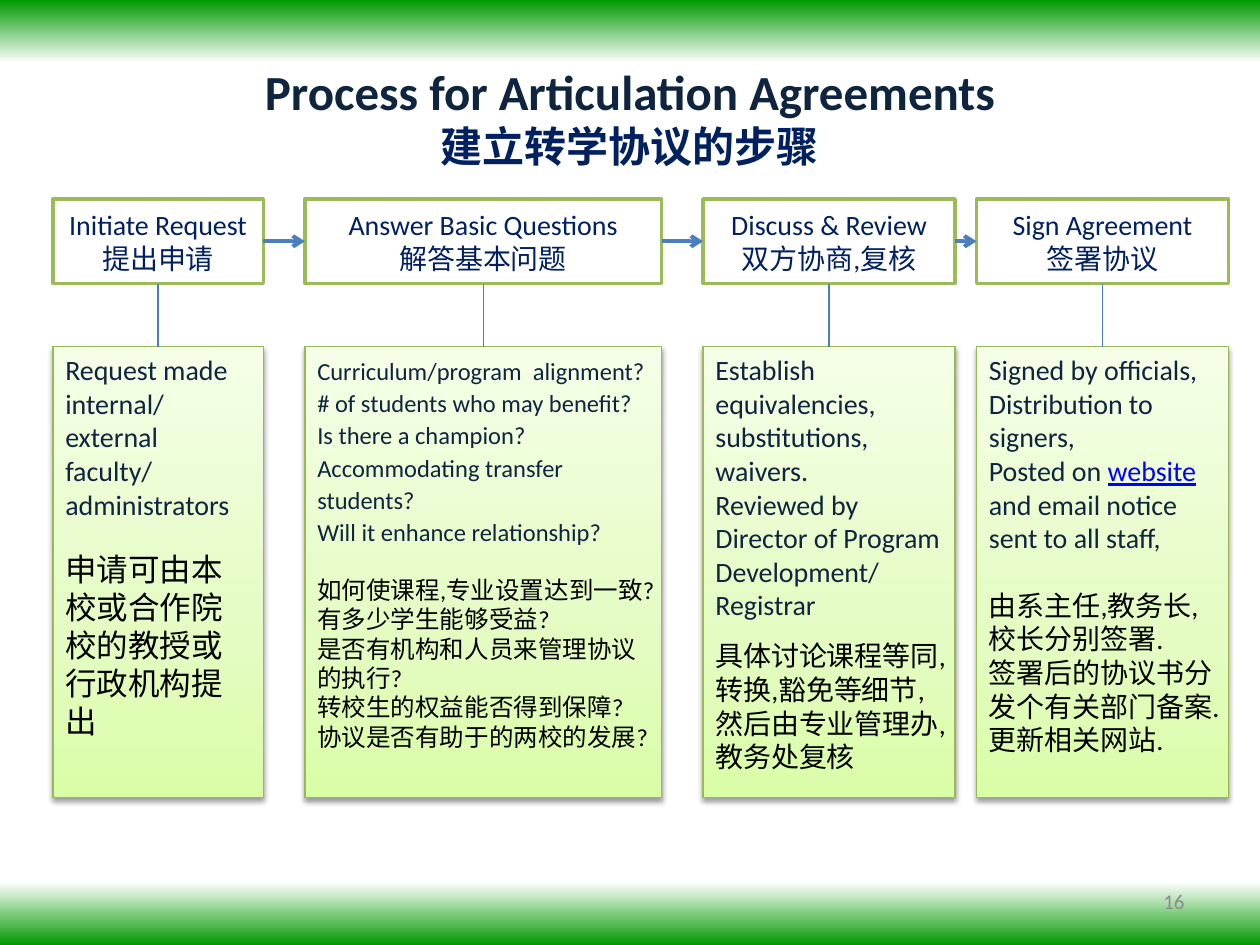
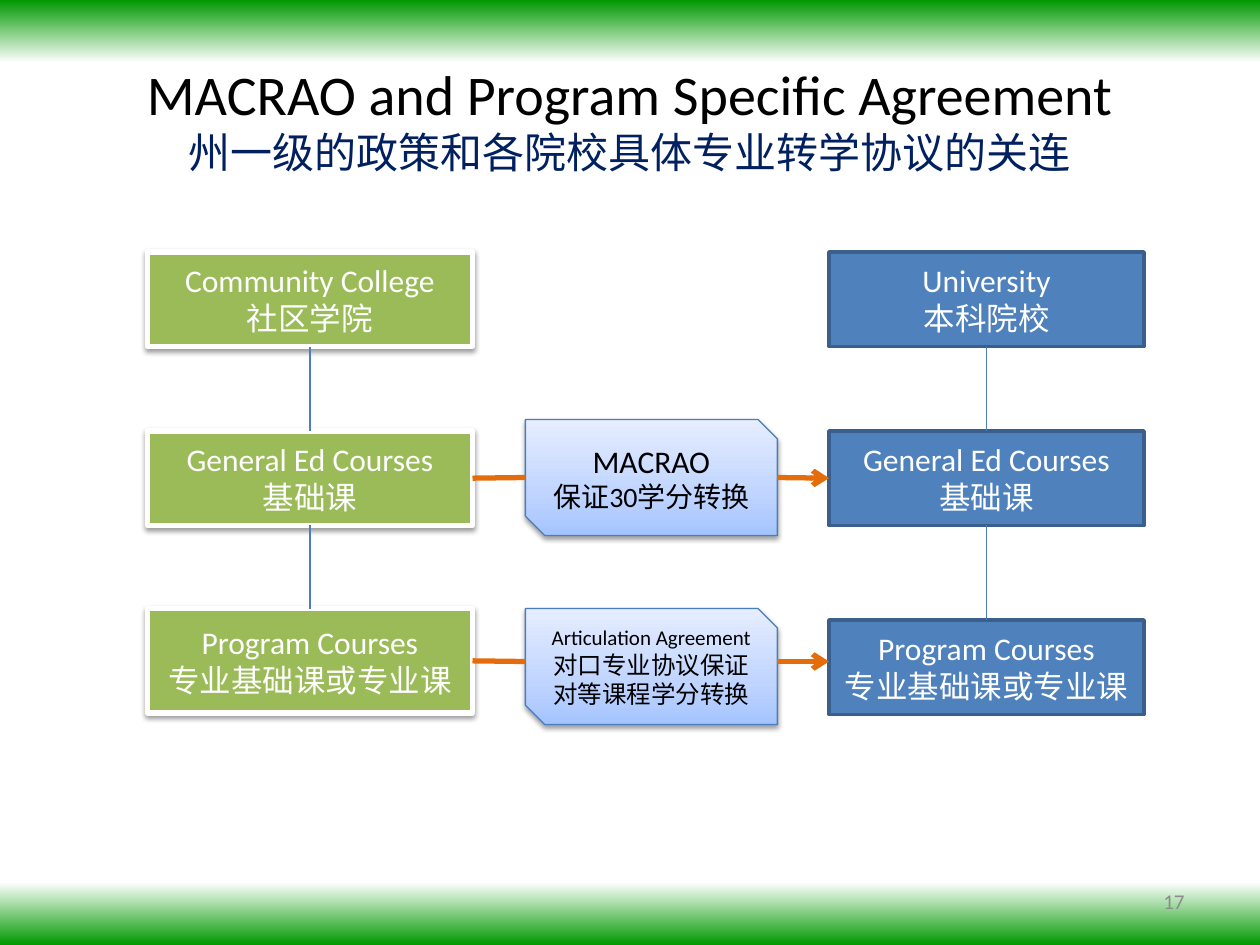
from dataclasses import dataclass

from lxml.etree import SubElement
from pptx import Presentation
from pptx.dml.color import RGBColor
from pptx.enum.shapes import MSO_CONNECTOR, MSO_SHAPE
from pptx.enum.text import MSO_ANCHOR, PP_ALIGN
from pptx.oxml.ns import qn
from pptx.shapes.autoshape import Shape
from pptx.util import Inches, Pt

FONT = "Calibri"
COLORS = {
    "band": "009900", "white": "FFFFFF", "black": "000000",
    "ink": "0F243E", "navy": "002060", "gray": "8C8C8C", "link": "0000FF",
    "green": "9BBB59", "edge": "98B955", "blue": "4F81BD",
    "rim": "3A5F8C", "wire": "4B7EBC", "orange": "E46C0A",
    "lime1": "DAFDA7", "lime2": "E4FCC2", "lime3": "F5FFE7",
    "sky1": "A4C4FF", "sky2": "BFD4FF", "sky3": "E6EEFF",
}
LIME = [(0, "lime1"), (35, "lime2"), (100, "lime3")]
SKY = [(0, "sky1"), (35, "sky2"), (100, "sky3")]
FADE = [(0, "band"), (100, "white")]
TOP, LEFT, BOTTOM, RIGHT = range(4)


@dataclass
class Line:
    text: str  # a part between bars is shown as a link
    size: float
    color: str
    bold: bool = False
    before: float = 0
    spacing: float = 1.0


def rgb(name):
    return RGBColor.from_string(COLORS[name])


def write(frame, lines, align=PP_ALIGN.CENTER, anchor=MSO_ANCHOR.MIDDLE):
    frame.word_wrap = True
    frame.vertical_anchor = anchor
    for i, line in enumerate(lines):
        para = frame.add_paragraph() if i else frame.paragraphs[0]
        para.alignment = align
        para.line_spacing = line.spacing
        if line.before:
            para.space_before = Pt(line.before)
        for j, part in enumerate(line.text.split("|")):
            run = para.add_run()
            run.text = part
            font = run.font
            font.name, font.size, font.bold = FONT, Pt(line.size), line.bold
            font.color.rgb = rgb("link" if j % 2 else line.color)
            font.underline = bool(j % 2)


def shade(shape, stops, angle=90):
    """Gradient fill; 90 runs upward and 270 downward."""
    shape.fill.gradient()
    shape.fill.gradient_angle = angle
    group = shape._element.spPr.find(qn("a:gradFill")).find(qn("a:gsLst"))
    for stop in list(group):
        group.remove(stop)
    for pos, name in stops:
        stop = SubElement(group, qn("a:gs"), pos=str(pos * 1000))
        SubElement(stop, qn("a:srgbClr"), val=COLORS[name])


def drop(shape):
    """Soft shadow below the shape."""
    effects = shape._element.spPr.find(qn("a:effectLst"))
    outer = SubElement(effects, qn("a:outerShdw"), blurRad=str(Pt(3.1)),
                       dist=str(Pt(1.6)), dir="5400000", rotWithShape="0")
    tint = SubElement(outer, qn("a:srgbClr"), val=COLORS["black"])
    SubElement(tint, qn("a:alpha"), val="38000")


def box(slide, at, fill, line=None, width=1.0, kind=MSO_SHAPE.RECTANGLE,
        shadow=False, angle=90):
    shape = slide.shapes.add_shape(kind, *map(Inches, at))
    shape.shadow.inherit = False
    if isinstance(fill, list):
        shade(shape, fill, angle)
    else:
        shape.fill.solid()
        shape.fill.fore_color.rgb = rgb(fill)
    if line:
        shape.line.color.rgb = rgb(line)
        shape.line.width = Pt(width)
    else:
        shape.line.fill.background()
    if shadow:
        drop(shape)
    return shape


def spot(end):
    """Point for an (x, y) pair or a (box, side) pair."""
    if not isinstance(end[0], Shape):
        return Inches(end[0]), Inches(end[1])
    item, side = end
    x = {LEFT: 0, RIGHT: item.width}.get(side, item.width // 2)
    y = {TOP: 0, BOTTOM: item.height}.get(side, item.height // 2)
    return item.left + x, item.top + y


def wire(slide, start, stop, color="wire", width=0.75, arrow=False):
    line = slide.shapes.add_connector(
        MSO_CONNECTOR.STRAIGHT, *spot(start), *spot(stop))
    if isinstance(start[0], Shape):
        line.begin_connect(*start)
    if isinstance(stop[0], Shape):
        line.end_connect(*stop)
    line.line.color.rgb = rgb(color)
    line.line.width = Pt(width)
    if arrow:
        SubElement(line.line._get_or_add_ln(), qn("a:tailEnd"), type="arrow")
    SubElement(line._element.spPr, qn("a:effectLst"))


def label(slide, at, lines, align=PP_ALIGN.CENTER):
    area = slide.shapes.add_textbox(*map(Inches, at))
    write(area.text_frame, lines, align)


def base(deck, title, number, top):
    """Slide with bands, title and page number."""
    slide = deck.slides.add_slide(deck.slide_layouts[6])
    box(slide, (0, 0, 10, 0.5), FADE, angle=270)
    box(slide, (0, 7, 10, 0.5), FADE)
    label(slide, (0.5, top, 9, 1.55 - top), title)
    label(slide, (7.17, 6.95, 2.33, 0.4),
          [Line(number, 12, "gray")], PP_ALIGN.RIGHT)
    return slide


def block(english, chinese, size, gap, big=None, spacing=1.0):
    """English lines, a gap, then Chinese lines."""
    lines = [Line(text, size, "ink", spacing=spacing) for text in english]
    return lines + [Line(text, big or size, "black", before=0 if i else gap)
                    for i, text in enumerate(chinese)]


STEPS = [  # left, width, heading, details
    (0.42, 1.67, ("Initiate Request", "提出申请"), block(
        ["Request made internal/ external faculty/ administrators"],
        ["申请可由本校或合作院校的教授或行政机构提出"], 16, 17, big=18)),
    (2.42, 2.83, ("Answer Basic Questions", "解答基本问题"), block(
        ["Curriculum/program  alignment?", "# of students who may benefit?",
         "Is there a champion?", "Accommodating transfer students?",
         "Will it enhance relationship?"],
        ["如何使课程,专业设置达到一致?", "有多少学生能够受益?",
         "是否有机构和人员来管理协议的执行?", "转校生的权益能否得到保障?",
         "协议是否有助于的两校的发展?"], 14, 16, spacing=1.1)),
    (5.58, 2, ("Discuss & Review", "双方协商,复核"), block(
        ["Establish equivalencies, substitutions, waivers.",
         "Reviewed by Director of Program Development/ Registrar"],
        ["具体讨论课程等同,转换,豁免等细节,然后由专业管理办,教务处复核"],
        16, 10)),
    (7.75, 2, ("Sign Agreement", "签署协议"), block(
        ["Signed by officials,", "Distribution to signers,",
         "Posted on |website| and email notice sent to all staff,"],
        ["由系主任,教务长,校长分别签署.",
         "签署后的协议书分发个有关部门备案.", "更新相关网站."], 16, 19.5)),
]


def process(deck):
    slide = base(deck, [
        Line("Process for Articulation Agreements", 28, "ink", True),
        Line("建立转学协议的步骤", 24, "navy", True)], "16", 0.3)
    heads = []
    for left, width, names, details in STEPS:
        head = box(slide, (left, 1.58, width, 0.67), "white", "green", 2)
        write(head.text_frame, [Line(name, 16, "navy") for name in names])
        body = box(slide, (left, 2.75, width, 3.58), LIME, "edge", 0.75,
                   shadow=True)
        write(body.text_frame, details, PP_ALIGN.LEFT, MSO_ANCHOR.TOP)
        wire(slide, (head, BOTTOM), (body, TOP))
        heads.append(head)
    for one, two in zip(heads, heads[1:]):
        wire(slide, (one, RIGHT), (two, LEFT), width=2.25, arrow=True)


def stack(slide, left, width, rows, *style, shadow=False):
    """Column of boxes joined from top to bottom."""
    items = []
    for top, height, names in rows:
        item = box(slide, (left, top, width, height), *style, shadow=shadow)
        write(item.text_frame, [Line(name, 18, "white") for name in names])
        if items:
            wire(slide, (items[-1], BOTTOM), (item, TOP))
        items.append(item)
    return items


def bridge(slide, top, lines):
    """Snipped box between the two columns."""
    item = box(slide, (4.17, top, 2, 0.92), SKY, "wire", 0.75,
               MSO_SHAPE.SNIP_2_DIAG_RECTANGLE, True)
    write(item.text_frame, lines)


def transfer(deck):
    slide = base(deck, [
        Line("MACRAO and Program Specific Agreement", 32, "black"),
        Line("州一级的政策和各院校具体专业转学协议的关连", 24, "navy")],
        "17", 0.33)
    general = (3.42, 0.75, ("General Ed Courses", "基础课"))
    program = ("Program Courses", "专业基础课或专业课")

    # Columns
    college = stack(slide, 1.17, 2.58, [
        (2, 0.75, ("Community College", "社区学院")), general,
        (4.83, 0.83, program)], "green", "white", 3, shadow=True)
    campus = stack(slide, 6.58, 2.5, [
        (2, 0.75, ("University", "本科院校")), general,
        (4.92, 0.75, program)], "blue", "rim", 2)

    # Agreements between the columns
    bridge(slide, 3.33, [Line("MACRAO", 18, "black"),
                         Line("保证30学分转换", 16, "black")])
    bridge(slide, 4.83, [Line("Articulation Agreement", 12, "black"),
                         Line("对口专业协议保证对等课程学分转换", 14, "black")])
    ends = [(3.79, (campus[1], LEFT)), (5.25, (6.58, 5.25))]
    for source, (y, target) in zip(college[1:], ends):
        wire(slide, (source, RIGHT), (4.17, y), "orange", 3)
        wire(slide, (6.17, y), target, "orange", 3, arrow=True)


def main():
    deck = Presentation()
    deck.slide_width, deck.slide_height = Inches(10), Inches(7.5)
    process(deck)
    transfer(deck)
    deck.save("out.pptx")


if __name__ == "__main__":
    main()
